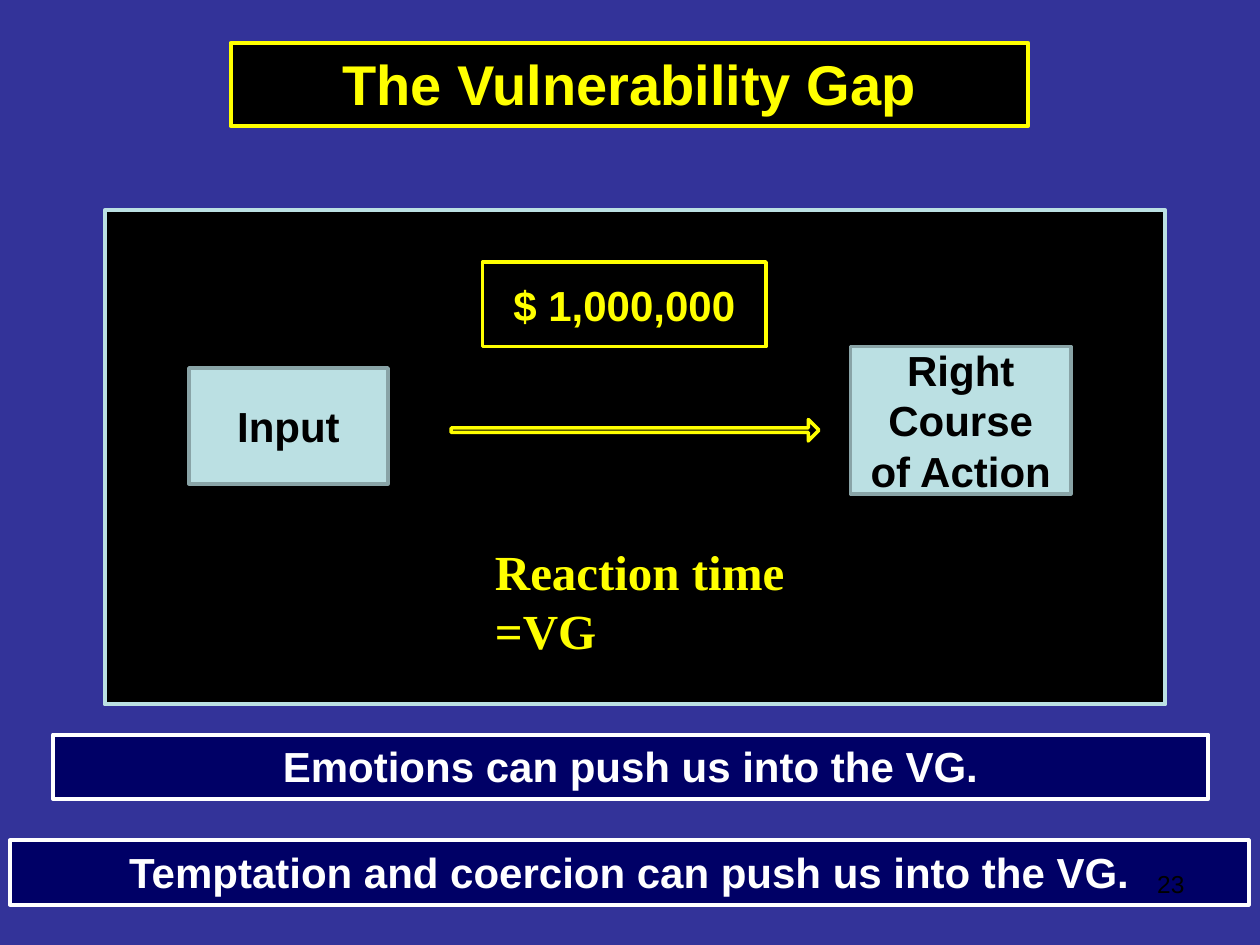
from dataclasses import dataclass
from typing import Optional

from pptx import Presentation
from pptx.dml.color import RGBColor
from pptx.enum import shapes, text
from pptx.util import Inches, Pt

BLACK, WHITE, YELLOW = "000000", "FFFFFF", "FFFF00"
NAVY, PALE_BLUE, GREY_BLUE, BACKGROUND = "000066", "BBE0E3", "89A4A7", "333399"
TOP, MIDDLE = text.MSO_ANCHOR.TOP, text.MSO_ANCHOR.MIDDLE
LEFT, CENTER, RIGHT = text.PP_ALIGN.LEFT, text.PP_ALIGN.CENTER, text.PP_ALIGN.RIGHT


@dataclass
class Box:
    left: float
    top: float
    width: float
    height: float
    fill: Optional[str]
    line: str
    line_width: float
    wording: str = ""
    color: str = BLACK
    anchor: text.MSO_ANCHOR = MIDDLE
    preset: shapes.MSO_SHAPE = shapes.MSO_SHAPE.RECTANGLE

    def place(self) -> tuple:
        return tuple(Inches(v) for v in (self.left, self.top, self.width, self.height))


def rgb(value: str) -> RGBColor:
    return RGBColor.from_string(value)


def paint(shape, box: Box) -> None:
    if box.fill:
        shape.fill.solid()
        shape.fill.fore_color.rgb = rgb(box.fill)
    else:
        shape.fill.background()
    shape.line.color.rgb = rgb(box.line)
    shape.line.width = Pt(box.line_width)


def write(shape, wording: str, size: float, color: str, bold: bool = True,
          align=CENTER, anchor=MIDDLE, font: str = "Arial") -> None:
    frame = shape.text_frame
    frame.text = wording
    frame.word_wrap = True
    frame.auto_size = text.MSO_AUTO_SIZE.NONE
    frame.vertical_anchor = anchor
    paragraph = frame.paragraphs[0]
    paragraph.alignment = align
    for run in paragraph.runs:
        run.font.name = font
        run.font.size = Pt(size)
        run.font.bold = bold
        run.font.color.rgb = rgb(color)


def add_box(slide, box: Box):
    shape = slide.shapes.add_shape(box.preset, *box.place())
    shape.shadow.inherit = False
    paint(shape, box)
    if box.wording:
        write(shape, box.wording, 24, box.color, anchor=box.anchor)
    return shape


def add_label(slide, left: float, top: float, width: float, height: float,
              wording: str, size: float, color: str, **style) -> None:
    label = slide.shapes.add_textbox(*(Inches(v) for v in (left, top, width, height)))
    write(label, wording, size, color, anchor=TOP, **style)


def set_title(slide, box: Box) -> None:
    title = slide.shapes.title
    title.left, title.top, title.width, title.height = box.place()
    paint(title, box)
    write(title, box.wording, 32, box.color, anchor=box.anchor)


HEADING = Box(1.83, 0.34, 6.33, 0.66, BLACK, YELLOW, 2.25,
              "The Vulnerability Gap", YELLOW, TOP)
PANEL = Box(0.83, 1.67, 8.42, 3.92, BLACK, PALE_BLUE, 2.25)
REACTION = Box(3.58, 3.33, 2.92, 0.17, None, YELLOW, 2,
               preset=shapes.MSO_SHAPE.RIGHT_ARROW)
STAGES = [
    Box(1.5, 2.92, 1.58, 0.92, PALE_BLUE, GREY_BLUE, 2, "Input"),
    Box(6.75, 2.75, 1.75, 1.17, PALE_BLUE, GREY_BLUE, 2, "Right Course of Action"),
]
PRIZE = Box(3.83, 2.08, 2.25, 0.67, BLACK, YELLOW, 2, "$ 1,000,000", YELLOW)
LESSONS = [
    Box(left, top, width, 0.51, NAVY, WHITE, 2.25, wording, WHITE, TOP)
    for left, top, width, wording in (
        (0.42, 5.83, 9.17, "Emotions can push us into the VG."),
        (0.08, 6.67, 9.83, "Temptation and coercion can push us into the VG."),
    )
]


def main() -> None:
    deck = Presentation()
    deck.slide_width, deck.slide_height = Inches(10), Inches(7.5)
    slide = deck.slides.add_slide(deck.slide_layouts[5])
    slide.background.fill.solid()
    slide.background.fill.fore_color.rgb = rgb(BACKGROUND)

    set_title(slide, HEADING)
    add_box(slide, PANEL)
    reaction_arrow = add_box(slide, REACTION)
    reaction_arrow.adjustments[0] = 0.21
    reaction_arrow.adjustments[1] = 0.5
    for box in [*STAGES, *LESSONS, PRIZE]:
        add_box(slide, box)
    add_label(slide, 3.83, 4.25, 2.5, 1.04, "Reaction time =VG", 28, YELLOW,
              align=LEFT, font="Times New Roman")
    add_label(slide, 7.17, 6.85, 2.33, 0.5, "23", 14, BLACK, bold=False, align=RIGHT)
    deck.save("out.pptx")


if __name__ == "__main__":
    main()
